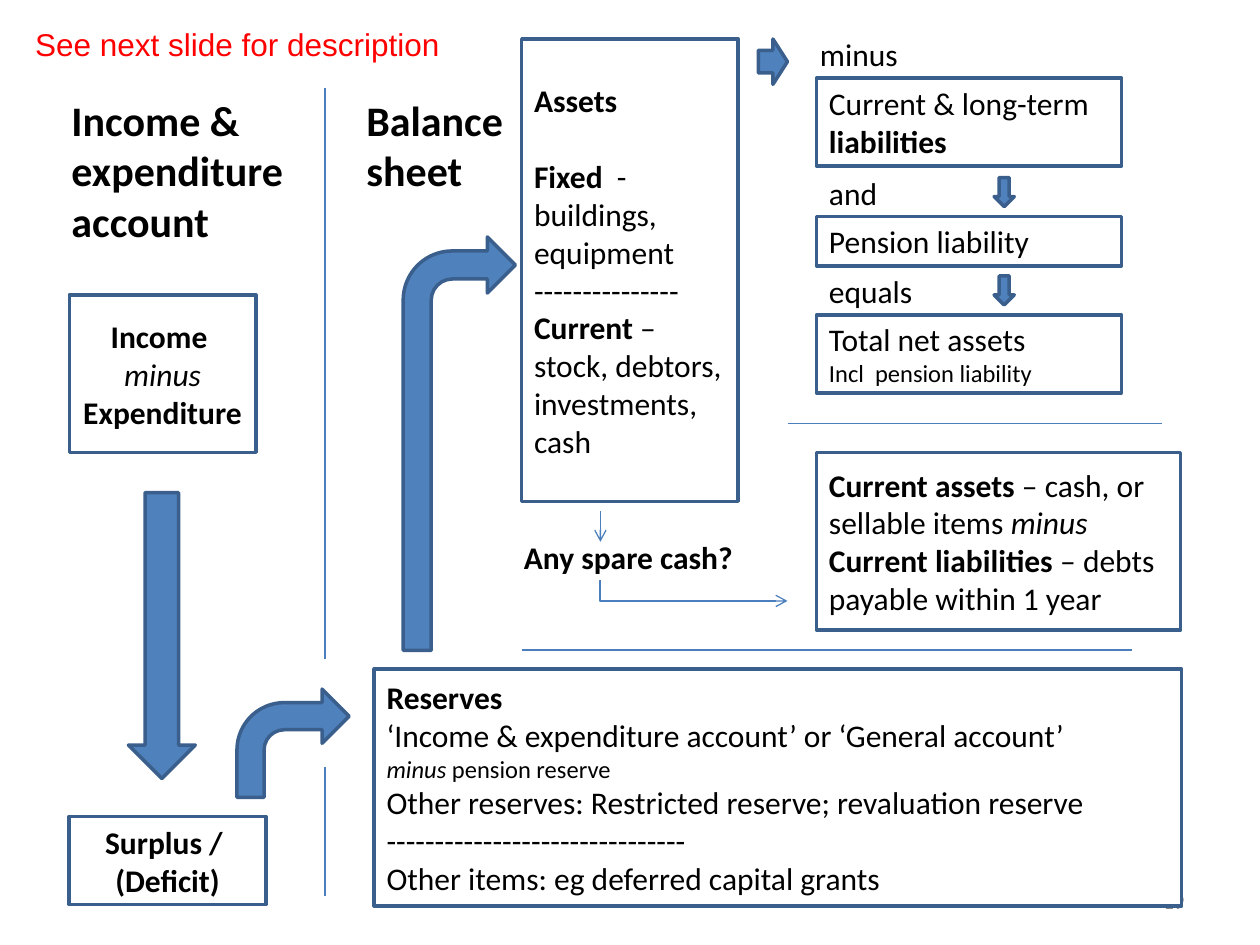
from dataclasses import dataclass

from lxml import etree
from pptx import Presentation
from pptx.dml.color import RGBColor
from pptx.enum import shapes, text
from pptx.oxml.ns import qn
from pptx.util import Pt


@dataclass(frozen=True)
class Theme:
    white: str = "FFFFFF"
    black: str = "000000"
    red: str = "FF0000"
    grey: str = "898989"
    arrow: str = "4F81BD"
    outline: str = "3A5F8C"
    rule: str = "4B7EBC"
    heading: int = 24
    body: int = 18
    detail: int = 14
    number: int = 12


THEME = Theme()
LEFT, CENTER, RIGHT = text.PP_ALIGN.LEFT, text.PP_ALIGN.CENTER, text.PP_ALIGN.RIGHT
TOP, MIDDLE = text.MSO_ANCHOR.TOP, text.MSO_ANCHOR.MIDDLE
SHAPE = shapes.MSO_SHAPE

presentation = Presentation()
presentation.slide_width, presentation.slide_height = Pt(720), Pt(540)
slide = presentation.slides.add_slide(presentation.slide_layouts[6])


def add_shape(kind, box, fill):
    shape = slide.shapes.add_shape(kind, *map(Pt, box))
    shape.shadow.inherit = False
    shape.fill.solid()
    shape.fill.fore_color.rgb = RGBColor.from_string(fill)
    shape.line.color.rgb = RGBColor.from_string(THEME.outline)
    shape.line.width = Pt(2)
    return shape


def write(shape, paragraphs, size=THEME.body, color=THEME.black, font="Calibri",
          align=LEFT, anchor=TOP, wrap=True, sizes={}, gaps={}):
    """Fill a shape with paragraphs of (text, style) runs, style being "", "b" or "i".

    sizes and gaps give a font size or space before to paragraphs by index.
    """
    frame = shape.text_frame
    frame.word_wrap = wrap
    frame.vertical_anchor = anchor
    for index, runs in enumerate(paragraphs):
        paragraph = frame.paragraphs[0] if index == 0 else frame.add_paragraph()
        paragraph.alignment = align
        paragraph.space_before = Pt(gaps.get(index, 0))
        for words, style in runs:
            run = paragraph.add_run()
            run.text = words
            run.font.name = font
            run.font.size = Pt(sizes.get(index, size))
            run.font.bold = style == "b"
            run.font.italic = style == "i"
            run.font.color.rgb = RGBColor.from_string(color)


# Slide number, partly covered by the reserves box
number = slide.shapes.add_textbox(Pt(516), Pt(500.5), Pt(168), Pt(28.8))
write(number, [[("19", "")]], size=THEME.number, color=THEME.grey,
      align=RIGHT, anchor=MIDDLE)

# Boxes: position, paragraphs, extra format
boxes = [
    ((39.6, 168.5, 106.6, 90),
     [[("Income ", "b")], [("minus", "i")], [("Expenditure", "b")]],
     {"align": CENTER}),
    ((39.6, 466.6, 112.3, 50.4),
     [[("Surplus / ", "b")], [("(Deficit)", "b")]],
     {"align": CENTER}),
    ((213.8, 382.3, 461.5, 135.4),
     [[("Reserves", "b")],
      [("‘Income & expenditure account’ or ‘General account’", "")],
      [("minus", "i"), (" pension reserve", "")],
      [("Other reserves: Restricted reserve; revaluation reserve", "")],
      [("-------------------------------", "")],
      [("Other items: eg deferred capital grants", "")]],
     {"sizes": {2: THEME.detail}}),
    ((298.1, 22.3, 123.8, 264.2),
     [[("Assets", "b")],
      [("Fixed", "b"), ("  - buildings, equipment", "")],
      [("---------------", "")],
      [("Current", "b"), (" – stock, debtors, investments, cash", "")]],
     {"gaps": {1: 22}}),
    ((466.6, 44.6, 174.2, 50.4),
     [[("Current & long-term ", ""), ("liabilities", "b")]], {}),
    ((466.6, 123.8, 174.2, 28.1), [[("Pension liability", "")]], {}),
    ((466.6, 180, 174.2, 44.6),
     [[("Total net assets", "")], [("Incl  pension liability", "")]],
     {"sizes": {1: THEME.detail}}),
    ((466.6, 258.5, 208.1, 101.5),
     [[("Current assets", "b"), (" – cash, or sellable items ", ""), ("minus", "i")],
      [("Current liabilities ", "b"), ("– debts payable within 1 year", "")]], {}),
]
for box, paragraphs, extra in boxes:
    write(add_shape(SHAPE.RECTANGLE, box, THEME.white), paragraphs,
          anchor=MIDDLE, **extra)

# Block arrows
for kind, box in [
    (SHAPE.DOWN_ARROW, (73.4, 281.5, 38.2, 163.4)),
    (SHAPE.BENT_ARROW, (135.4, 393.8, 64.1, 61.9)),
    (SHAPE.BENT_ARROW, (230.4, 135.4, 64.1, 236.2)),
    (SHAPE.RIGHT_ARROW, (433.4, 22.3, 16.6, 25.9)),
    (SHAPE.DOWN_ARROW, (568.1, 101.5, 11.5, 16.6)),
    (SHAPE.DOWN_ARROW, (568.1, 157.7, 11.5, 16.6)),
]:
    add_shape(kind, box, THEME.arrow)

# Headings and labels
heading = {"size": THEME.heading}
label = {"wrap": False}
for box, lines, style, extra in [
    ((33.8, 50.4, 163.4, 94.3), ["Income &", "expenditure", "account"], "b", heading),
    ((202.3, 50.4, 101.5, 65.5), ["Balance sheet"], "b", heading),
    ((461.5, 16.6, 59.8, 28.8), ["minus"], "", label),
    ((466.6, 95.8, 46.8, 28.8), ["and"], "", label),
    ((466.6, 151.9, 62.6, 28.8), ["equals"], "", label),
    ((292.3, 303.8, 134.6, 28.8), ["Any spare cash?"], "b", label),
    ((13, 10.8, 267.1, 28.8), ["See next slide for description"], "",
     {"color": THEME.red, "font": "Arial"}),
]:
    textbox = slide.shapes.add_textbox(*map(Pt, box))
    write(textbox, [[(line, style)] for line in lines], **extra)

# Dividers and thin arrows
STRAIGHT, ELBOW = shapes.MSO_CONNECTOR.STRAIGHT, shapes.MSO_CONNECTOR.ELBOW
for kind, ends, has_head in [
    (STRAIGHT, (185.8, 50.4, 185.8, 376.6), False),
    (STRAIGHT, (185.8, 438.5, 185.8, 511.9), False),
    (STRAIGHT, (298.1, 371.5, 646.6, 371.5), False),
    (STRAIGHT, (450, 241.9, 663.8, 241.9), False),
    (STRAIGHT, (343.1, 292.3, 343.1, 309.6), True),
    (ELBOW, (343.1, 331.9, 450, 343.4), True),
]:
    connector = slide.shapes.add_connector(kind, *map(Pt, ends))
    connector.line.color.rgb = RGBColor.from_string(THEME.rule)
    connector.line.width = Pt(0.75)
    properties = connector._element.spPr
    etree.SubElement(properties, qn("a:effectLst"))
    if has_head:
        etree.SubElement(properties.find(qn("a:ln")), qn("a:tailEnd"), type="arrow")
    if kind == ELBOW:
        # Turn at the very start: down first, then right
        guides = properties.find(qn("a:prstGeom")).find(qn("a:avLst"))
        etree.SubElement(guides, qn("a:gd"), name="adj1", fmla="val -300")

presentation.save("out.pptx")
